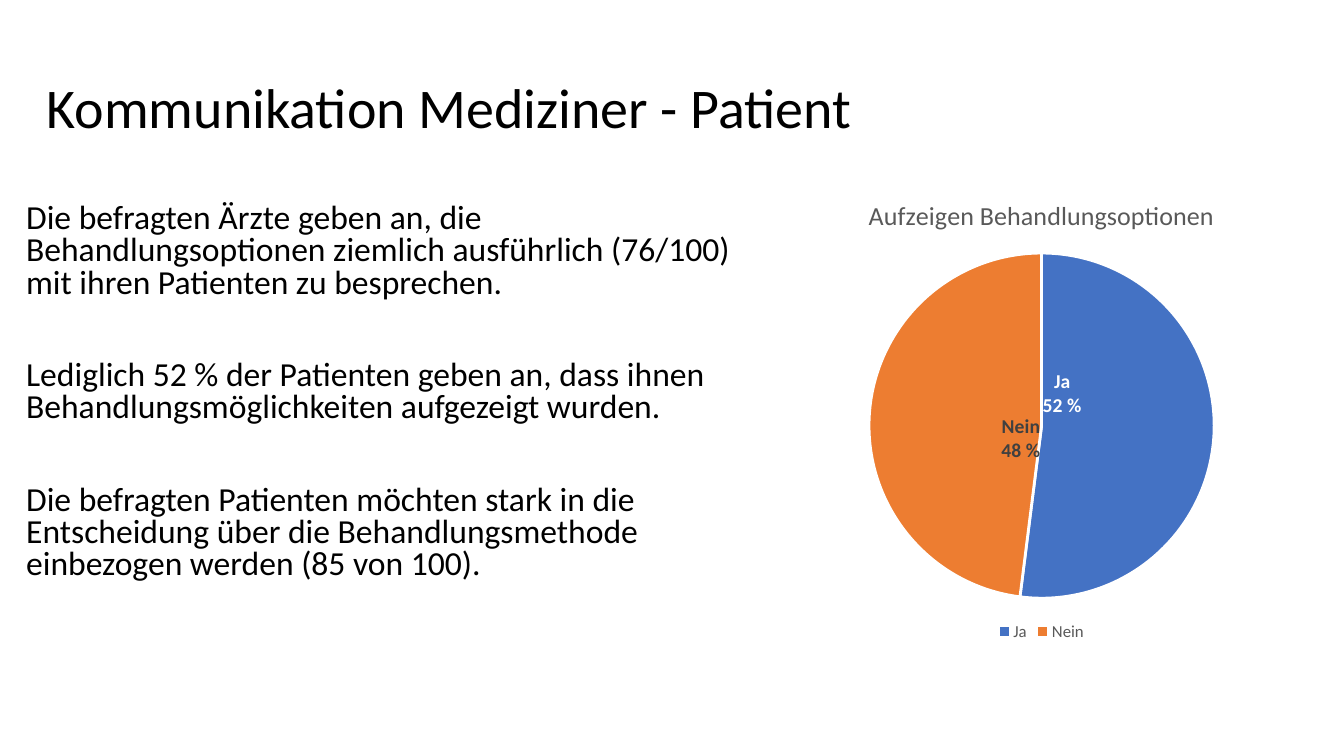
from lxml import etree
from pptx import Presentation
from pptx.chart.data import CategoryChartData
from pptx.dml.color import RGBColor
from pptx.enum.chart import XL_CHART_TYPE, XL_LABEL_POSITION, XL_LEGEND_POSITION
from pptx.enum.text import MSO_ANCHOR
from pptx.oxml.ns import qn
from pptx.util import Cm, Pt

PIE = XL_CHART_TYPE.PIE
LABEL_CENTER = XL_LABEL_POSITION.CENTER
LEGEND_BOTTOM = XL_LEGEND_POSITION.BOTTOM
TOP, MIDDLE = MSO_ANCHOR.TOP, MSO_ANCHOR.MIDDLE

BLACK = RGBColor(0x00, 0x00, 0x00)
WHITE = RGBColor(0xFF, 0xFF, 0xFF)
GRAY = RGBColor(0x59, 0x59, 0x59)
DARK_GRAY = RGBColor(0x40, 0x40, 0x40)
BLUE = RGBColor(0x44, 0x72, 0xC4)
ORANGE = RGBColor(0xED, 0x7D, 0x31)
FONT = "Calibri"

TITLE = "Kommunikation Mediziner - Patient"
FINDINGS = [
    "Die befragten Ärzte geben an, die Behandlungsoptionen ziemlich ausführlich "
    "(76/100) mit ihren Patienten zu besprechen.",
    "Lediglich 52 % der Patienten geben an, dass ihnen Behandlungsmöglichkeiten "
    "aufgezeigt wurden.",
    "Die befragten Patienten möchten stark in die Entscheidung über die "
    "Behandlungsmethode einbezogen werden (85 von 100).",
]
CHART_TITLE = "Aufzeigen Behandlungsoptionen"
# answer, value, label, fill, label colour, label shift as a share of the chart
ANSWERS = [
    ("Ja", 52, "Ja\n52 %", BLUE, WHITE, {"x": -0.11, "y": -0.08}),
    ("Nein", 48, "Nein\n48 %", ORANGE, DARK_GRAY, {"x": 0.11, "y": 0.04}),
]
PIE_AREA = {"layoutTarget": "inner", "xMode": "edge", "yMode": "edge",
            "x": 0.21, "y": 0.16, "w": 0.58, "h": 0.74}

TITLE_BOX = (Cm(0.93), Cm(0.94), Cm(29.21), Cm(3.68))
FINDINGS_BOX = (Cm(0.41), Cm(5.01), Cm(19.3), Cm(10.72))
CHART_BOX = (Cm(18.75), Cm(4.48), Cm(15), Cm(11.79))


def style_font(font, size, color, bold=False):
    font.name = FONT
    font.size = Pt(size)
    font.color.rgb = color
    font.bold = bold


def add_text(slide, box, lines, size, line_spacing, gap, anchor):
    text_frame = slide.shapes.add_textbox(*box).text_frame
    text_frame.word_wrap = True
    text_frame.vertical_anchor = anchor
    text_frame.text = "\n".join(lines)
    for paragraph in text_frame.paragraphs:
        paragraph.line_spacing = line_spacing
        paragraph.space_after = Pt(gap)
        style_font(paragraph.runs[0].font, size, BLACK)


def make_layout(settings):
    """Return a c:layout element with a manual layout."""
    layout = etree.Element(qn("c:layout"))
    manual = etree.SubElement(layout, qn("c:manualLayout"))
    for name, value in settings.items():
        etree.SubElement(manual, qn("c:" + name)).set("val", str(value))
    return layout


def style_slices(chart):
    points = chart.plots[0].series[0].points
    for index, (_, _, label, fill, label_color, _) in enumerate(ANSWERS):
        point = points[index]
        point.format.fill.solid()
        point.format.fill.fore_color.rgb = fill
        point.format.line.color.rgb = WHITE
        point.format.line.width = Pt(2)
        text_frame = point.data_label.text_frame
        text_frame.text = label
        for paragraph in text_frame.paragraphs:
            style_font(paragraph.runs[0].font, 14, label_color, bold=True)
        point.data_label.position = LABEL_CENTER
    labels = chart.element.findall(".//" + qn("c:dLbl"))
    for label_element, answer in zip(labels, ANSWERS):
        label_element.insert(1, make_layout(answer[5]))


def add_pie(slide):
    chart_data = CategoryChartData()
    chart_data.categories = [answer[0] for answer in ANSWERS]
    chart_data.add_series(CHART_TITLE, [answer[1] for answer in ANSWERS])
    chart = slide.shapes.add_chart(PIE, *CHART_BOX, chart_data).chart
    style_font(chart.font, 10, BLACK)

    chart.has_title = True
    title_frame = chart.chart_title.text_frame
    title_frame.text = CHART_TITLE
    style_font(title_frame.paragraphs[0].runs[0].font, 18.6, GRAY)
    chart.has_legend = True
    chart.legend.position = LEGEND_BOTTOM
    chart.legend.include_in_layout = False
    style_font(chart.legend.font, 12, GRAY)

    chart.plots[0].vary_by_categories = True
    plot_area = chart.element.find(".//" + qn("c:plotArea"))
    for layout in plot_area.findall(qn("c:layout")):
        plot_area.remove(layout)
    plot_area.insert(0, make_layout(PIE_AREA))
    style_slices(chart)


def main():
    presentation = Presentation()
    presentation.slide_width = Cm(33.87)
    presentation.slide_height = Cm(19.05)
    slide = presentation.slides.add_slide(presentation.slide_layouts[6])
    add_text(slide, TITLE_BOX, [TITLE], 40, 0.9, 0, MIDDLE)
    add_text(slide, FINDINGS_BOX, FINDINGS, 24, 0.8, 43, TOP)
    add_pie(slide)
    presentation.save("out.pptx")


if __name__ == "__main__":
    main()
